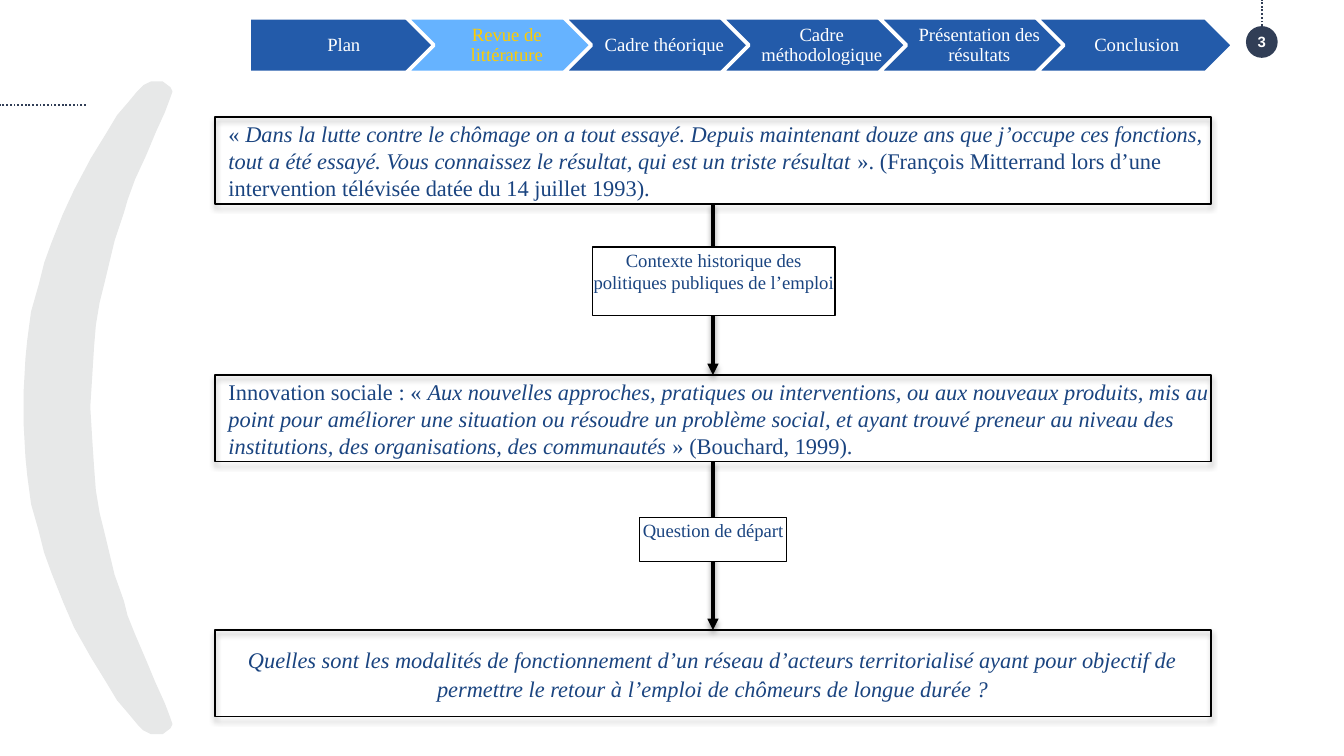
from lxml.etree import SubElement
from pptx import Presentation
from pptx.dml.color import RGBColor
from pptx.enum.dml import MSO_LINE
from pptx.enum.shapes import MSO_CONNECTOR, MSO_SHAPE
from pptx.enum.text import MSO_ANCHOR, PP_ALIGN
from pptx.oxml.ns import qn
from pptx.util import Pt

BLUE, LIGHT, NAVY, INK = "235BAA", "66B3FF", "313E56", "1A4480"
GREY, BLACK, WHITE, YELLOW = "E7E8E8", "000000", "FFFFFF", "FFCC00"
SERIF = "Times New Roman"
STEPS = ["Plan", "Revue de littérature", "Cadre théorique",
         "Cadre méthodologique", "Présentation des résultats", "Conclusion"]
CURRENT_STEP = "Revue de littérature"
MITTERRAND = [
    ("« ", False),
    ("Dans la lutte contre le chômage on a tout essayé. Depuis maintenant "
     "douze ans que j’occupe ces fonctions, tout a été essayé. Vous connaissez "
     "le résultat, qui est un triste résultat", True),
    (" ». (François Mitterrand lors d’une intervention télévisée datée du "
     "14 juillet 1993).", False)]
INNOVATION = [
    ("Innovation sociale : « ", False),
    ("Aux nouvelles approches, pratiques ou interventions, ou aux nouveaux "
     "produits, mis au point pour améliorer une situation ou résoudre un "
     "problème social, et ayant trouvé preneur au niveau des institutions, des "
     "organisations, des communautés", True),
    (" » (Bouchard, 1999).", False)]
QUESTION = [
    ("Quelles sont les modalités de fonctionnement d’un réseau d’acteurs "
     "territorialisé ayant pour objectif de permettre le retour à l’emploi de "
     "chômeurs de longue durée ?", True)]
CRESCENT_TOP = [
    (13, 218.5), (13, 210), (13.7, 192), (15, 182), (17.3, 167), (21, 152.6),
    (24.5, 141), (28, 129.6), (33.8, 115), (40.3, 101.5), (49, 85), (57, 72),
    (63.4, 62), (69, 54.7), (74.2, 49), (77, 46), (81.4, 44), (87, 44),
    (91.4, 46.8), (92.2, 49), (91.4, 51.8), (87.8, 59.8), (82.8, 71.3),
    (77.8, 82.8), (72, 96.5), (68.4, 106.6), (65.5, 114.5), (61.2, 129),
    (56.2, 149.8), (53.3, 162), (51, 174), (49.7, 186.5), (49, 202),
    (48.2, 218.5)]


def rgb(value):
    """Return the colour for a hex string."""
    return RGBColor.from_string(value)


class SlideBuilder:
    """Holds the text style and the current slide."""

    def __init__(self, slide):
        """Keep the slide and the default font."""
        self.s = slide
        self.font = {"name": SERIF, "size": Pt(12), "bold": False}

    def text(self, sp, runs, color, inset=(0, 0, 0, 0), align=PP_ALIGN.CENTER,
             anchor=MSO_ANCHOR.MIDDLE, spacing=1.0, **font):
        """Write one paragraph of (text, italic) runs."""
        tf = sp.text_frame
        sides = ("margin_left", "margin_top", "margin_right", "margin_bottom")
        frame = dict(zip(sides, map(Pt, inset)), word_wrap=True, vertical_anchor=anchor)
        for key, value in frame.items():
            setattr(tf, key, value)
        p = tf.paragraphs[0]
        p.alignment, p.line_spacing = align, spacing
        for words, italic in runs:
            r = p.add_run()
            r.text = words
            for key, value in {**self.font, **font, "italic": italic}.items():
                setattr(r.font, key, value)
            r.font.color.rgb = rgb(color)

    def shadow(self, effects, alpha):
        """Add a soft shadow below to an effect list."""
        outer = SubElement(effects, qn("a:outerShdw"), blurRad=str(Pt(3.1)),
                           dist=str(Pt(1.8)), dir="5400000", rotWithShape="0")
        clr = SubElement(outer, qn("a:srgbClr"), val=BLACK)
        SubElement(clr, qn("a:alpha"), val=str(alpha * 1000))

    def paint(self, sp, fill, line, width):
        """Set fill and outline, either of which may be None."""
        sp.shadow.inherit = False
        for part, color in ((sp.fill, fill), (sp.line.fill, line)):
            if color:
                part.solid()
                part.fore_color.rgb = rgb(color)
            else:
                part.background()
        if line:
            sp.line.width = Pt(width)
        return sp

    def shape(self, kind, box, fill=None, line=None, width=1):
        """Add a preset shape."""
        sp = self.s.shapes.add_shape(kind, *map(Pt, box))
        return self.paint(sp, fill, line, width)

    def outline(self, points, color):
        """Add a closed outline."""
        fb = self.s.shapes.build_freeform(*points[0], scale=Pt(1))
        fb.add_line_segments(points[1:], close=True)
        return self.paint(fb.convert_to_shape(), color, color, 0.75)

    def frame(self, box):
        """Add an unfilled rectangle with a shadow."""
        sp = self.shape(MSO_SHAPE.RECTANGLE, box, line=BLACK)
        self.shadow(sp._element.spPr.find(qn("a:effectLst")), 35)
        return sp

    def textbox(self, box, runs, **style):
        """Add a text box."""
        self.text(self.s.shapes.add_textbox(*map(Pt, box)), runs, INK, **style)

    def label(self, box, words):
        """Add a white box that names an arrow."""
        sp = self.shape(MSO_SHAPE.RECTANGLE, box, WHITE, BLACK, 0.75)
        self.text(sp, [(words, False)], INK, inset=(0, 1, 0, 0),
                  anchor=MSO_ANCHOR.TOP, size=Pt(10))

    def line(self, ends, color, width):
        """Add a straight connector and its empty effect list."""
        cn = self.s.shapes.add_connector(MSO_CONNECTOR.STRAIGHT, *map(Pt, ends))
        cn.line.color.rgb = rgb(color)
        cn.line.width = Pt(width)
        return cn, SubElement(cn._element.spPr, qn("a:effectLst"))

    def dotted(self, ends):
        """Add a dotted line."""
        cn, _ = self.line(ends, NAVY, 1)
        cn.line.dash_style = MSO_LINE.ROUND_DOT
        return cn

    def arrow(self, upper, lower):
        """Join two frames with a downward arrow."""
        cn, effects = self.line((0, 0, 0, 0), BLACK, 2)
        cn.begin_connect(upper, 2)
        cn.end_connect(lower, 0)
        SubElement(cn.line._get_or_add_ln(), qn("a:tailEnd"), type="triangle")
        self.shadow(effects, 38)


def main():
    """Build the slide and save it."""
    prs = Presentation()
    prs.slide_width, prs.slide_height = Pt(720), Pt(405)
    b = SlideBuilder(prs.slides.add_slide(prs.slide_layouts[6]))

    mirrored = [(x, 437 - y) for x, y in reversed(CRESCENT_TOP[1:-1])]
    b.outline(CRESCENT_TOP + mirrored, GREY)
    badge = b.shape(MSO_SHAPE.OVAL, (667.5, 14, 17, 17), NAVY)
    b.text(badge, [("3", False)], WHITE, name="Arial", size=Pt(8), bold=True)
    b.dotted((676, 14, 676, 0)).begin_connect(badge, 0)
    b.dotted((46, 56.4, 0, 56.4))

    for i, step in enumerate(STEPS):
        kind = MSO_SHAPE.CHEVRON if i else MSO_SHAPE.PENTAGON
        fill, color = (LIGHT, YELLOW) if step == CURRENT_STEP else (BLUE, WHITE)
        sp = b.shape(kind, (133.4 + 84.36 * i, 9.5, 105.4, 29.4), fill, WHITE, 2)
        b.text(sp, [(step, False)], color, inset=(2.9 if i else 4.3, 2, 0.7, 2),
               spacing=0.9, size=Pt(10))

    left, width, height = 115.2, 533.5, 46.4
    tops = (62.8, 200.9, 337.5)
    frames = [b.frame((left, top, width, height)) for top in tops]
    for top, quote in zip(tops, (MITTERRAND, INNOVATION)):
        b.textbox((left + 7.2, top, width - 7.2, height), quote, align=PP_ALIGN.LEFT)
    b.textbox((left, tops[2] + 4.3, width, 37.8), QUESTION,
              inset=(7.2, 3.6, 7.2, 3.6), anchor=MSO_ANCHOR.TOP, spacing=1.07)

    for upper, lower in zip(frames, frames[1:]):
        b.arrow(upper, lower)
    b.label((317.3, 132.3, 130, 36.8),
            "Contexte historique des politiques publiques de l’emploi")
    b.label((342.6, 277.2, 78.8, 23.8), "Question de départ")
    prs.save("out.pptx")


if __name__ == "__main__":
    main()
